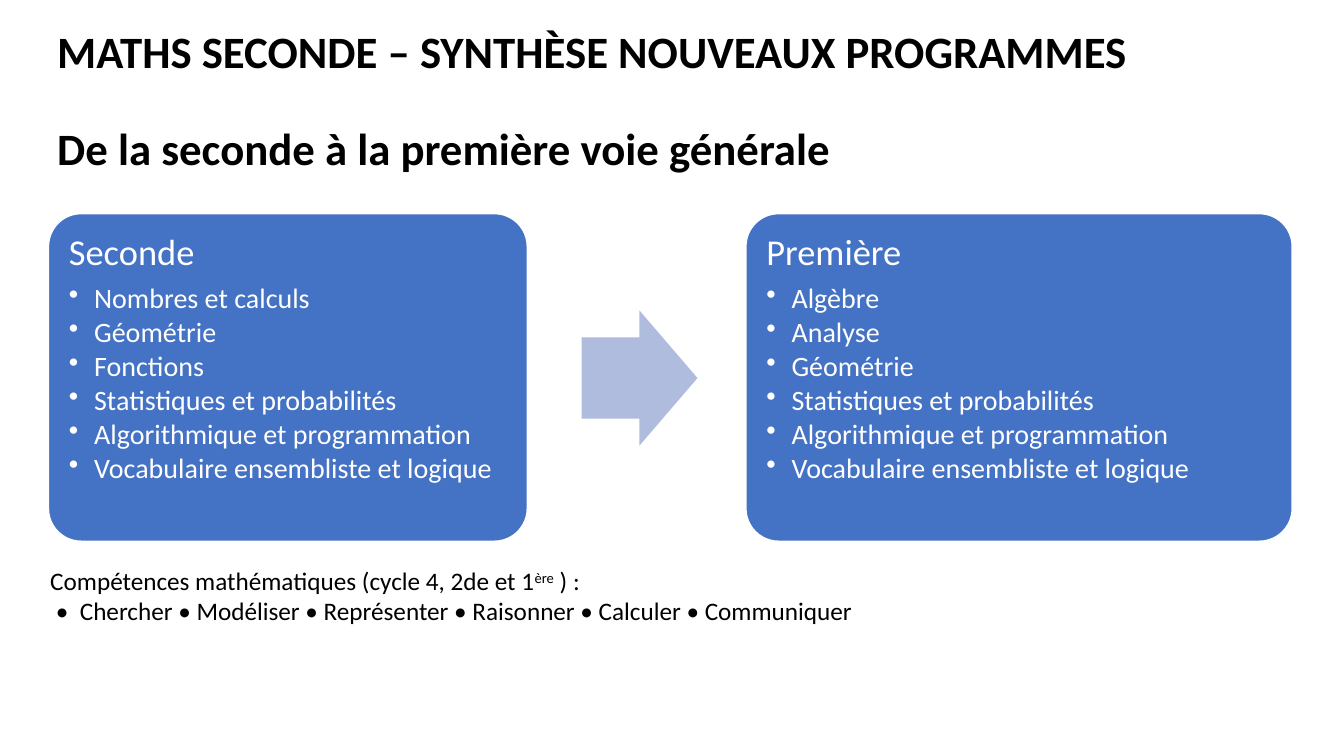
from dataclasses import dataclass

from lxml import etree
from pptx import Presentation
from pptx.dml import color
from pptx.enum import shapes, text
from pptx.oxml import ns
from pptx.util import Pt


@dataclass(frozen=True)
class Theme:
    font: str = "Calibri"
    black: str = "000000"
    white: str = "FFFFFF"
    card: str = "4472C4"
    arrow: str = "B0BCDE"
    title_size: float = 32
    heading_size: float = 26
    item_size: float = 20
    note_size: float = 18


@dataclass(frozen=True)
class Area:
    left: float
    top: float
    width: float
    height: float

    def lengths(self) -> tuple:
        return Pt(self.left), Pt(self.top), Pt(self.width), Pt(self.height)


@dataclass(frozen=True)
class Card:
    area: Area
    heading: str
    topics: tuple


THEME = Theme()
CARD_TOP, CARD_HEIGHT = 152.6, 234
SHARED_TOPICS = (
    "Statistiques et probabilités",
    "Algorithmique et programmation",
    "Vocabulaire ensembliste et logique",
)
CARDS = (
    Card(Area(34.6, CARD_TOP, 342, CARD_HEIGHT), "Seconde",
         ("Nombres et calculs", "Géométrie", "Fonctions") + SHARED_TOPICS),
    Card(Area(532.8, CARD_TOP, 390.2, CARD_HEIGHT), "Première",
         ("Algèbre", "Analyse", "Géométrie") + SHARED_TOPICS),
)
TITLE_LINES = (
    "MATHS SECONDE – SYNTHÈSE NOUVEAUX PROGRAMMES",
    "De la seconde à la première voie générale",
)
SKILLS = " •  Chercher • Modéliser • Représenter • Raisonner • Calculer • Communiquer"


def rgb(value: str) -> color.RGBColor:
    return color.RGBColor.from_string(value)


def add_span(para, words: str, size: float, tint: str, bold: bool = False):
    span = para.add_run()
    span.text = words
    span.font.name = THEME.font
    span.font.size = Pt(size)
    span.font.bold = bold
    span.font.color.rgb = rgb(tint)
    return span


def next_para(frame, first: bool):
    para = frame.paragraphs[0] if first else frame.add_paragraph()
    para.alignment = text.PP_ALIGN.LEFT
    return para


def set_bullet(para, indent: float) -> None:
    props = para._p.get_or_add_pPr()
    props.set("marL", str(Pt(indent)))
    props.set("indent", str(-Pt(indent)))
    etree.SubElement(props, ns.qn("a:buChar")).set("char", "•")


def add_text_box(page, area: Area):
    frame = page.shapes.add_textbox(*area.lengths()).text_frame
    frame.word_wrap = True
    return frame


def add_filled(page, kind, area: Area, fill: str, adjustments: tuple):
    shape = page.shapes.add_shape(kind, *area.lengths())
    shape.shadow.inherit = False
    shape.fill.solid()
    shape.fill.fore_color.rgb = rgb(fill)
    shape.line.fill.background()
    for index, value in enumerate(adjustments):
        shape.adjustments[index] = value
    return shape


def add_title(page) -> None:
    frame = add_text_box(page, Area(33.8, 29.5, 857.5, 87.1))
    frame.vertical_anchor = text.MSO_ANCHOR.MIDDLE
    for index, line in enumerate(TITLE_LINES):
        para = next_para(frame, index == 0)
        para.line_spacing = 0.9
        para.space_before = Pt(35 * index)
        add_span(para, line, THEME.title_size, THEME.black, bold=True)


def add_card(page, card: Card) -> None:
    shape = add_filled(page, shapes.MSO_SHAPE.ROUNDED_RECTANGLE, card.area,
                       THEME.card, (0.1,))
    shape.line.color.rgb = rgb(THEME.white)
    shape.line.width = Pt(1)
    frame = shape.text_frame
    frame.word_wrap = True
    frame.vertical_anchor = text.MSO_ANCHOR.TOP
    frame.margin_left = frame.margin_right = Pt(7.8)
    frame.margin_top = frame.margin_bottom = Pt(7.8)
    heading = next_para(frame, True)
    heading.line_spacing = 0.9
    heading.space_after = Pt(8)
    add_span(heading, card.heading, THEME.heading_size, THEME.white)
    for topic in card.topics:
        para = next_para(frame, False)
        para.level = 1
        para.line_spacing = 0.9
        para.space_after = Pt(2.7)
        set_bullet(para, 18)
        add_span(para, topic, THEME.item_size, THEME.white)


def add_skills(page) -> None:
    frame = add_text_box(page, Area(28.8, 400.3, 894.2, 51.1))
    intro = next_para(frame, True)
    add_span(intro, "Compétences mathématiques (cycle 4, 2de et 1",
             THEME.note_size, THEME.black)
    ordinal = add_span(intro, "ère", THEME.note_size, THEME.black)
    ordinal._r.get_or_add_rPr().set("baseline", "30000")
    add_span(intro, " ) :", THEME.note_size, THEME.black)
    add_span(next_para(frame, False), SKILLS, THEME.note_size, THEME.black)


def main() -> None:
    """Build the slide comparing the Seconde and Première programmes."""
    deck = Presentation()
    deck.slide_width, deck.slide_height = Pt(960), Pt(540)
    page = deck.slides.add_slide(deck.slide_layouts[6])
    add_title(page)
    for card in CARDS:
        add_card(page, card)
    add_filled(page, shapes.MSO_SHAPE.RIGHT_ARROW,
               Area(415.4, 221.8, 82.8, 96.5), THEME.arrow, (0.6, 0.5))
    add_skills(page)
    deck.save("out.pptx")


if __name__ == "__main__":
    main()
